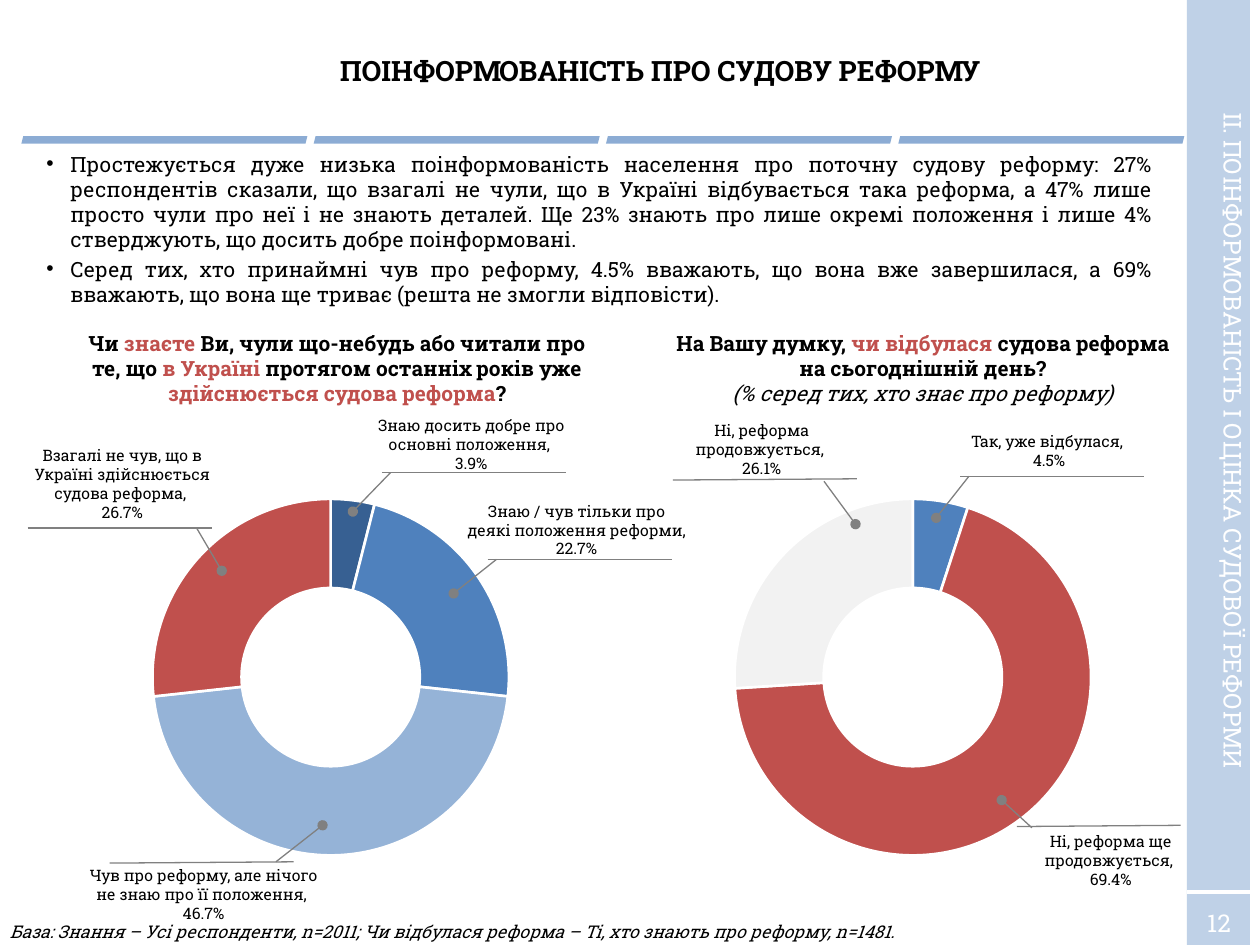
from lxml.etree import SubElement
from pptx import Presentation
from pptx.chart.data import CategoryChartData
from pptx.dml.color import RGBColor
from pptx.enum.chart import XL_CHART_TYPE as ChartType
from pptx.enum.shapes import MSO_CONNECTOR as Connector, MSO_SHAPE as Shape
from pptx.enum.text import MSO_ANCHOR as Anchor, PP_ALIGN as Align
from pptx.oxml import parse_xml
from pptx.oxml.ns import nsdecls, qn
from pptx.util import Inches, Pt

FONT = "Roboto Slab"
BLACK = RGBColor(0x00, 0x00, 0x00)
WHITE = RGBColor(0xFF, 0xFF, 0xFF)
GRAY = RGBColor(0x80, 0x80, 0x80)
PALE = RGBColor(0xF2, 0xF2, 0xF2)
NAVY = RGBColor(0x37, 0x60, 0x92)
BLUE = RGBColor(0x4F, 0x81, 0xBD)
SKY = RGBColor(0x95, 0xB3, 0xD7)
RED = RGBColor(0xC0, 0x50, 0x4D)

COLUMNS, ROWS = 1000, 750
RING_WIDTH, RING_HEIGHT = 0.84, 0.91

TITLE = "ПОІНФОРМОВАНІСТЬ ПРО СУДОВУ РЕФОРМУ"
SECTION = "ІІ. ПОІНФОРМОВАНІСТЬ І ОЦІНКА СУДОВОЇ РЕФОРМИ"
PAGE = "12"
BASE = "База: Знання – Усі респонденти, n=2011; Чи відбулася реформа – Ті, хто знають про реформу, n=1481."
FINDINGS = [
    "Простежується дуже низька поінформованість населення про поточну судову реформу: 27% "
    "респондентів сказали, що взагалі не чули, що в Україні відбувається така реформа, а 47% лише "
    "просто чули про неї і не знають деталей. Ще 23% знають про лише окремі положення і лише 4% "
    "стверджують, що досить добре поінформовані.",
    "Серед тих, хто принаймні чув про реформу, 4.5% вважають, що вона вже завершилася, а 69% "
    "вважають, що вона ще триває (решта не змогли відповісти).",
]
QUESTIONS = [
    (59, [("Чи ", BLACK), ("знаєте", RED), (" Ви, чули що-небудь або читали про те, що ", BLACK),
          ("в Україні ", RED), ("протягом останніх років уже ", BLACK),
          ("здійснюється судова реформа", RED), ("?", BLACK)], None),
    (524, [("На Вашу думку, ", BLACK), ("чи відбулася", RED),
           (" судова реформа на сьогоднішній день?", BLACK)],
     "(% серед тих, хто знає про реформу)"),
]
CHARTS = [
    (93, [4, 23, 47, 27], [NAVY, BLUE, SKY, RED]),
    (555, [5, 69, 26], [BLUE, RED, PALE]),
]
CALLOUTS = [
    ("Знаю досить добре про основні положення, ", "3.9%",
     (282, 325, 184, 56), (280, 406, 310, 375), (303, 375, 449, 375)),
    ("Знаю / чув тільки про деякі положення реформи, ", "22.7%",
     (360, 393, 195, 56), (360, 471, 394, 444), (387, 444, 533, 444)),
    ("Чув про реформу, але нічого не знаю про її положення, ", "46.7%",
     (58, 682, 207, 56), (256, 655, 219, 684), (87, 685, 233, 684)),
    ("Взагалі не чув, що в Україні здійснюється судова реформа, ", "26.7%",
     (5, 349, 184, 71), (176, 453, 156, 419), (22, 419, 168, 419)),
    ("Так, уже відбулася, ", "4.5%",
     (735, 338, 195, 40), (743, 411, 769, 378), (762, 378, 908, 378)),
    ("Ні, реформа ще продовжується, ", "69.4%",
     (784, 655, 195, 56), (795, 635, 819, 657), (807, 656, 937, 655)),
    ("Ні, реформа продовжується, ", "26.1%",
     (507, 329, 195, 56), (679, 416, 654, 382), (534, 381, 680, 380)),
]

prs = Presentation()
prs.slide_width, prs.slide_height = Inches(10), Inches(7.5)
UNIT = prs.slide_width // COLUMNS
s = prs.slides.add_slide(prs.slide_layouts[5])


def grid(*cells):
    return [c * UNIT for c in cells]


def style(p, size, color=BLACK, align=Align.CENTER, bold=False, italic=False):
    p.alignment = align
    f = p.font
    f.name, f.size, f.bold, f.italic = FONT, Pt(size), bold, italic
    f.color.rgb = color


def add_text(box, lines, size, **look):
    sp = s.shapes.add_textbox(*grid(*box))
    tf = sp.text_frame
    tf.word_wrap = True
    for i, line in enumerate(lines):
        p = tf.paragraphs[0] if i == 0 else tf.add_paragraph()
        p.text = line
        style(p, size, **look)
    return sp


def add_block(kind, box, color, opacity):
    sp = s.shapes.add_shape(kind, *grid(*box))
    sp.shadow.inherit = False
    sp.fill.solid()
    sp.fill.fore_color.rgb = color
    sp.line.fill.background()
    clr = sp.fill._xPr.find(qn("a:solidFill"))[0]
    SubElement(clr, qn("a:alpha"), val=str(opacity * 1000))


def add_line(ends, color, width, dot=False):
    cx = s.shapes.add_connector(Connector.STRAIGHT, *grid(*ends))
    cx.line.color.rgb = color
    cx.line.width = Pt(width)
    if dot:
        SubElement(cx.line._get_or_add_ln(), qn("a:headEnd"), type="oval")
    SubElement(cx._element.spPr, qn("a:effectLst"))


def add_doughnut(left, values, colors):
    data = CategoryChartData()
    data.categories = [str(i + 1) for i in range(len(values))]
    data.add_series("Series 1", values)
    chart = s.shapes.add_chart(ChartType.DOUGHNUT, *grid(left, 382, 339, 311), data).chart
    chart.has_legend = chart.has_title = False
    chart.font.name, chart.font.size = "Calibri", Pt(18)
    chart.font.color.rgb = BLACK
    plot = chart.plots[0]
    plot.vary_by_categories = False
    for i, color in enumerate(colors):
        fmt = plot.series[0].points[i].format
        fmt.fill.solid()
        fmt.fill.fore_color.rgb = color
        fmt.line.color.rgb = WHITE
        fmt.line.width = Pt(1.5)
    area = chart._chartSpace.chart.plotArea
    for old in area.findall(qn("c:layout")):
        area.remove(old)
    area.insert(0, parse_xml(
        f'<c:layout {nsdecls("c")}><c:manualLayout><c:layoutTarget val="inner"/>'
        '<c:xMode val="edge"/><c:yMode val="edge"/>'
        f'<c:x val="{(1 - RING_WIDTH) / 2}"/><c:y val="{(1 - RING_HEIGHT) / 2}"/>'
        f'<c:w val="{RING_WIDTH}"/><c:h val="{RING_HEIGHT}"/></c:manualLayout></c:layout>'))


add_block(Shape.RECTANGLE, (942, 0, 50, ROWS), SKY, 60)
for i in range(4):
    add_block(Shape.PARALLELOGRAM, (17 + 232 * i, 108, 227, 6), BLUE, 65)
number = add_text((938, 715, 59, 34), [PAGE], 14, color=WHITE)
number.text_frame.vertical_anchor = Anchor.MIDDLE
add_line((942, 708, 992, 708), WHITE, 2)
add_text((692, 321, 550, 57), [SECTION], 14, color=WHITE).rotation = 90

title = s.shapes.title
title.left, title.top, title.width, title.height = grid(115, 18, 818, 75)
title.text_frame.text = TITLE
title.text_frame.vertical_anchor = Anchor.MIDDLE
style(title.text_frame.paragraphs[0], 16, bold=True)

body = add_text((27, 115, 898, 73), FINDINGS, 12, align=Align.JUSTIFY)
for i, p in enumerate(body.text_frame.paragraphs):
    pPr = p._p.get_or_add_pPr()
    pPr.set("marL", str(19 * UNIT))
    pPr.set("indent", str(-19 * UNIT))
    for tag in ('buFont typeface="Arial"', 'buChar char="•"'):
        bullet = parse_xml(f'<a:{tag} {nsdecls("a")}/>')
        pPr.insert_element_before(bullet, "a:tabLst", "a:defRPr", "a:extLst")
    if i:
        p.space_before = Pt(2.4)

for left, parts, note in QUESTIONS:
    tf = add_text((left, 257, 417, 71), [""], 12, bold=True).text_frame
    for text, color in parts:
        r = tf.paragraphs[0].add_run()
        r.text = text
        r.font.color.rgb = color
    if note:
        p = tf.add_paragraph()
        p.text = note
        style(p, 12, italic=True)

for left, values, colors in CHARTS:
    add_doughnut(left, values, colors)
for answer, share, box, pointer, shelf in CALLOUTS:
    add_line(pointer, GRAY, 0.75, dot=True)
    add_line(shelf, GRAY, 0.75)
    add_text(box, [answer, share], 9)

add_text((-2, 726, 942, 27), [BASE], 10, align=Align.LEFT, italic=True)

prs.save("out.pptx")
